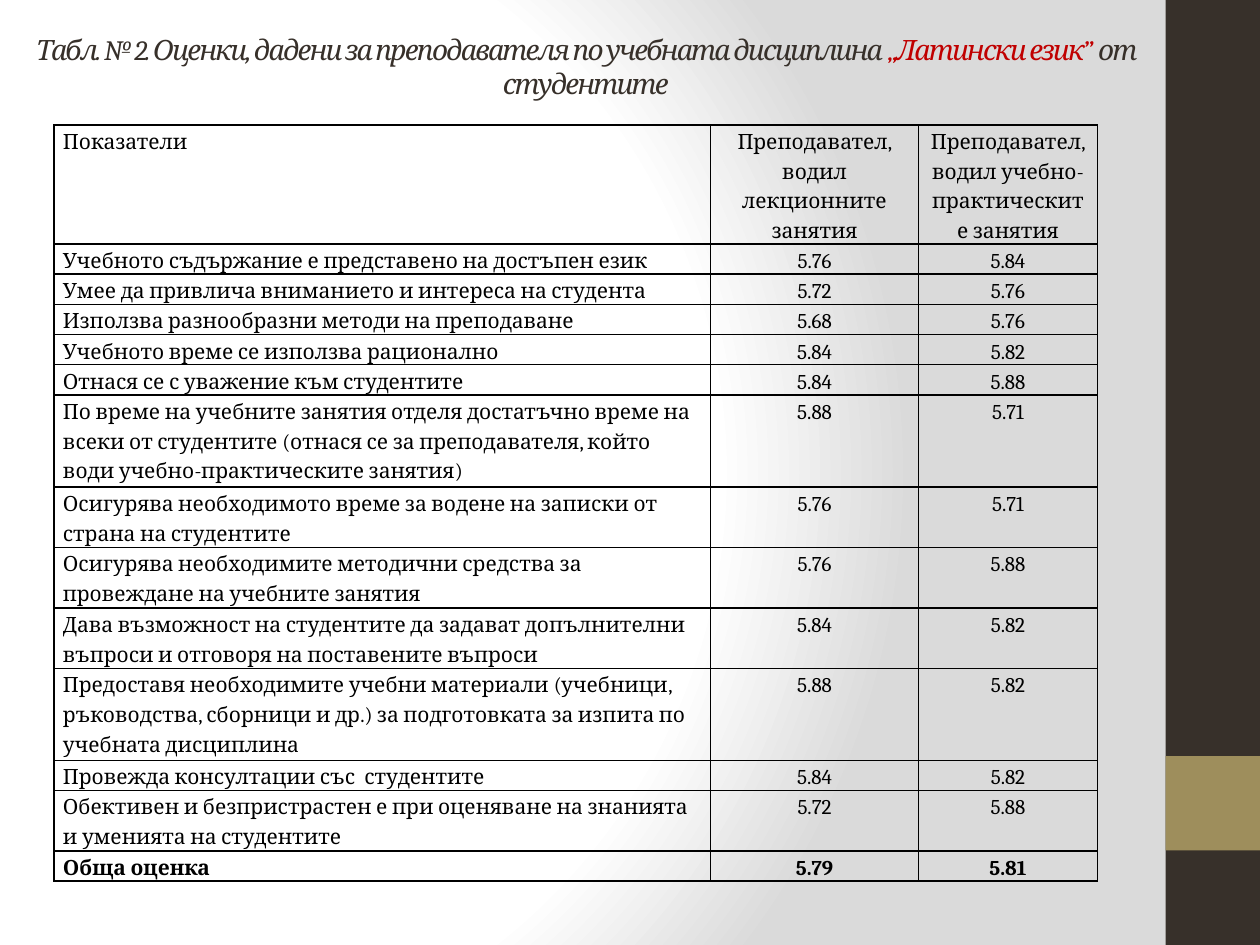
"""Build the slide with student ratings of the Latin language teacher."""
from pptx import Presentation
from pptx.dml.color import RGBColor
from pptx.enum.shapes import MSO_SHAPE
from pptx.enum.text import MSO_ANCHOR, MSO_AUTO_SIZE, PP_ALIGN
from pptx.oxml import parse_xml
from pptx.oxml.ns import nsdecls
from pptx.util import Inches, Pt

RECT = MSO_SHAPE.RECTANGLE
MIDDLE = MSO_ANCHOR.MIDDLE
NO_FIT = MSO_AUTO_SIZE.NONE
LEFT, CENTER, JUSTIFY = PP_ALIGN.LEFT, PP_ALIGN.CENTER, PP_ALIGN.JUSTIFY

FONT = "Cambria"
COLORS = {"white": "FFFFFF", "gray": "DADADA", "dark": "37302A",
          "gold": "9E8E5C", "red": "C00000", "black": "000000"}
TITLE = [
    ("Табл. № 2. Оценки, дадени за преподавателя по учебната дисциплина ", "dark"),
    ("„Латински език” ", "red"),
    ("от студентите", "dark"),
]
WIDTHS = [5.21, 1.65, 1.42]
HEIGHTS = {1: 0.24, 2: 0.48, 3: 0.73, 4: 0.9}
ROWS = [
    (4, "Показатели", "Преподавател, водил лекционните занятия",
     "Преподавател, водил учебно-практическите занятия"),
    (1, "Учебното съдържание е представено на достъпен език", "5.76", "5.84"),
    (1, "Умее да привлича вниманието и интереса на студента", "5.72", "5.76"),
    (1, "Използва разнообразни методи на преподаване", "5.68", "5.76"),
    (1, "Учебното време се използва рационално", "5.84", "5.82"),
    (1, "Отнася се с уважение към студентите", "5.84", "5.88"),
    (3, "По време на учебните занятия отделя достатъчно време на всеки от "
     "студентите (отнася се за преподавателя, който води "
     "учебно-практическите занятия)", "5.88", "5.71"),
    (2, "Осигурява необходимото време за водене на записки от страна на "
     "студентите", "5.76", "5.71"),
    (2, "Осигурява необходимите методични средства за провеждане на "
     "учебните занятия", "5.76", "5.88"),
    (2, "Дава възможност на студентите да задават допълнителни въпроси и "
     "отговоря на поставените въпроси", "5.84", "5.82"),
    (3, "Предоставя необходимите учебни материали (учебници, ръководства, "
     "сборници и др.) за подготовката за изпита по учебната дисциплина",
     "5.88", "5.82"),
    (1, "Провежда консултации със  студентите", "5.84", "5.82"),
    (2, "Обективен и безпристрастен е при оценяване на знанията и уменията "
     "на студентите", "5.72", "5.88"),
    (1, "Обща оценка", "5.79", "5.81"),
]


def add_text(para, text, size=12, color="black", bold=False, italic=False, space=0):
    run = para.add_run()
    run.text = text
    font = run.font
    font.name, font.size = FONT, Pt(size)
    font.bold, font.italic = bold, italic
    font.color.rgb = RGBColor.from_string(COLORS[color])
    if space:
        run._r.get_or_add_rPr().set("spc", str(space * 100))


def set_back(slide):
    stops = "".join(
        f'<a:gs pos="{pos * 1000}"><a:srgbClr val="{COLORS[name]}"/></a:gs>'
        for pos, name in [(0, "white"), (75, "white"), (100, "gray")])
    slide.element.cSld.insert(0, parse_xml(
        f'<p:bg {nsdecls("p", "a")}><p:bgPr><a:gradFill rotWithShape="1">'
        f'<a:gsLst>{stops}</a:gsLst><a:path path="circle">'
        '<a:fillToRect l="20000" t="50000" r="100000" b="50000"/></a:path>'
        '</a:gradFill><a:effectLst/></p:bgPr></p:bg>'))


def add_bar(slide, top, height, color):
    bar = slide.shapes.add_shape(
        RECT, Inches(9.25), Inches(top), Inches(0.75), Inches(height))
    bar.shadow.inherit = False
    bar.fill.solid()
    bar.fill.fore_color.rgb = RGBColor.from_string(COLORS[color])
    bar.line.fill.background()


def set_title(slide):
    title = slide.shapes.title
    title.left, title.top = Inches(0.12), Inches(0.21)
    title.width, title.height = Inches(9.06), Inches(0.63)
    frame = title.text_frame
    frame.word_wrap, frame.auto_size = True, NO_FIT
    frame.vertical_anchor = MIDDLE
    para = frame.paragraphs[0]
    para.alignment = CENTER
    for text, color in TITLE:
        add_text(para, text, size=16, color=color, italic=True, space=-1)


def set_cell(cell, text, align, bold):
    cell.margin_left = cell.margin_right = Inches(0.07)
    cell.margin_top = cell.margin_bottom = 0
    para = cell.text_frame.paragraphs[0]
    para.alignment, para.line_spacing = align, Pt(17)
    add_text(para, text, bold=bold)
    props = cell._tc.get_or_add_tcPr()
    for side in ("lnL", "lnR", "lnT", "lnB"):
        props.append(parse_xml(
            f'<a:{side} {nsdecls("a")} w="12700"><a:solidFill>'
            f'<a:srgbClr val="{COLORS["black"]}"/></a:solidFill></a:{side}>'))
    cell.fill.background()


def add_grid(slide):
    tall = [HEIGHTS[row[0]] for row in ROWS]
    table = slide.shapes.add_table(
        len(ROWS), len(WIDTHS), Inches(0.43), Inches(0.99),
        Inches(sum(WIDTHS)), Inches(sum(tall))).table
    table.first_row = table.horz_banding = False
    for col, width in zip(table.columns, WIDTHS):
        col.width = Inches(width)
    last = len(ROWS) - 1
    for i, (_, *texts) in enumerate(ROWS):
        table.rows[i].height = Inches(tall[i])
        for j, text in enumerate(texts):
            align = CENTER if j else LEFT if i else JUSTIFY
            set_cell(table.cell(i, j), text, align, i == last)


def main():
    deck = Presentation()
    deck.slide_width, deck.slide_height = Inches(10), Inches(7.5)
    slide = deck.slides.add_slide(deck.slide_layouts[5])
    set_back(slide)
    add_bar(slide, 0, 7.5, "dark")
    add_bar(slide, 6, 0.75, "gold")
    set_title(slide)
    add_grid(slide)
    deck.save("out.pptx")


if __name__ == "__main__":
    main()
